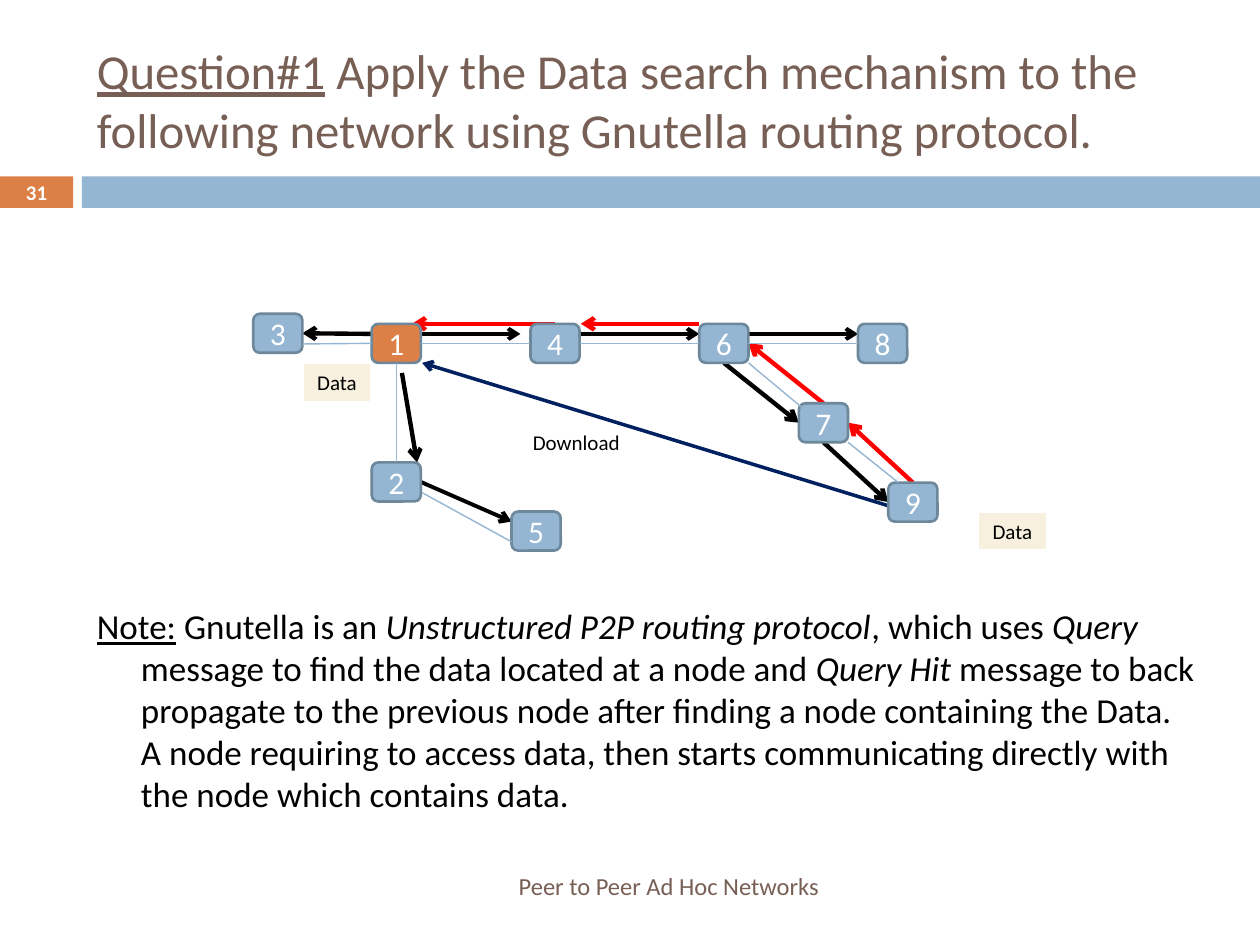
from lxml import etree
from pptx import Presentation
from pptx.dml.color import RGBColor
from pptx.enum.shapes import MSO_CONNECTOR, MSO_SHAPE
from pptx.enum.text import MSO_ANCHOR, PP_ALIGN
from pptx.oxml.ns import qn
from pptx.util import Pt

PX = 9144
RECT, ROUND = MSO_SHAPE.RECTANGLE, MSO_SHAPE.ROUNDED_RECTANGLE
STRAIGHT = MSO_CONNECTOR.STRAIGHT
LEFT, CENTER, RIGHT = PP_ALIGN.LEFT, PP_ALIGN.CENTER, PP_ALIGN.RIGHT
TOP, MIDDLE = MSO_ANCHOR.TOP, MSO_ANCHOR.MIDDLE
TOP_SIDE, LEFT_SIDE, BOTTOM_SIDE, RIGHT_SIDE = range(4)
FONT = "Calibri"
BLUE, ORANGE, BROWN, CREAM = "94B6D2", "DD8047", "775F55", "F7F0DE"
SLATE, NAVY, RED, BLACK, WHITE = "6D879B", "002060", "FF0000", "000000", "FFFFFF"

NODE_SIZE = (39, 31)
NODES = {
    "1": (94, 8), "9": (504, 134), "8": (480, 8), "5": (205, 157), "7": (433, 71),
    "6": (354, 8), "4": (220, 8), "2": (94, 118), "3": (0, 0),
}
QUERIES = [
    ((134, 16), (212, 16), 2.25),
    ((94, 16), ("3", RIGHT_SIDE), 2.5),
    ((118, 47), (130, 118), 2.5),
    ((393, 16), (480, 16), 2.25),
    ((260, 16), (354, 16), 2.25),
    (("6", BOTTOM_SIDE), ("7", LEFT_SIDE), 2.5),
    (("7", BOTTOM_SIDE), ("9", LEFT_SIDE), 2.5),
    (("2", RIGHT_SIDE), (205, 165), 2.25),
]
HITS = [
    (("9", TOP_SIDE), ("7", RIGHT_SIDE), 2.5),
    (("4", TOP_SIDE), (126, 8), 2.5),
    ((354, 8), (260, 8), 2.5),
    (("7", TOP_SIDE), ("6", RIGHT_SIDE), 2.5),
]
LINKS = [
    (("1", RIGHT_SIDE), ("4", LEFT_SIDE)),
    (("4", RIGHT_SIDE), ("6", LEFT_SIDE)),
    (("6", RIGHT_SIDE), ("8", LEFT_SIDE)),
    ((393, 39), (441, 79)),
    ((472, 102), (512, 134)),
    (("1", BOTTOM_SIDE), ("2", TOP_SIDE)),
    ((134, 142), (205, 181)),
    ((39, 24), ("1", LEFT_SIDE)),
]
UNDERLINE, ITALIC = {"underline": True}, {"italic": True}
TITLE = [
    ("Question#1", UNDERLINE),
    (" Apply the Data search mechanism to the following network using Gnutella routing protocol.", {}),
]
NOTE = [
    ("Note:", UNDERLINE),
    (" Gnutella is an ", {}),
    ("Unstructured P2P routing protocol", ITALIC),
    (", which uses ", {}),
    ("Query", ITALIC),
    (" message to find the data located at a node and ", {}),
    ("Query Hit ", ITALIC),
    ("message to back propagate to the previous node after finding a node containing the Data. "
     "A node requiring to access data, then starts communicating directly with the node which "
     "contains data.", {}),
]


def color(value):
    """Turn a hex string into a colour."""
    return RGBColor.from_string(value)


def emu(lengths):
    """Turn lengths in px into EMU."""
    return [length * PX for length in lengths]


def apply(target, values):
    """Set each named attribute on the target."""
    for name, value in values.items():
        setattr(target, name, value)


def write(shape, spans, size, ink, align=CENTER, anchor=MIDDLE, hanging=0):
    """Fill a shape with one paragraph of formatted spans."""
    apply(shape.text_frame, {"word_wrap": True, "vertical_anchor": anchor})
    para = shape.text_frame.paragraphs[0]
    para.alignment = align
    if hanging:
        settings = para._p.get_or_add_pPr()
        settings.set("marL", str(hanging * PX))
        settings.set("indent", str(-hanging * PX))
    for words, styles in spans:
        span = para.add_run()
        span.text = words
        apply(span.font, {"name": FONT, "size": Pt(size), **styles})
        span.font.color.rgb = color(ink)


def add_text(page, box, spans, size, ink, **layout):
    """Add a text box."""
    write(page.shapes.add_textbox(*emu(box)), spans, size, ink, **layout)


def add_block(page, kind, box, fill, line=None):
    """Add a flat filled shape, outlined when a line colour is given."""
    block = page.shapes.add_shape(kind, *emu(box))
    block.shadow.inherit = False
    block.fill.solid()
    block.fill.fore_color.rgb = color(fill)
    if line:
        block.line.color.rgb = color(line)
        block.line.width = Pt(1.5)
    else:
        block.line.fill.background()
    return block


def add_edge(page, box, nodes, start, end, ink, width, arrows=()):
    """Join two ends, each a point in the box or a node with its side."""
    left, top = box
    points = [(0, 0) if spot[0] in nodes else (left + spot[0], top + spot[1])
              for spot in (start, end)]
    edge = page.shapes.add_connector(STRAIGHT, *emu(points[0] + points[1]))
    for spot, connect in ((start, edge.begin_connect), (end, edge.end_connect)):
        if spot[0] in nodes:
            connect(nodes[spot[0]], spot[1])
    edge.line.color.rgb = color(ink)
    edge.line.width = Pt(width)
    for tip in arrows:
        etree.SubElement(edge.line._get_or_add_ln(), qn(f"a:{tip}"), type="arrow")
    etree.SubElement(edge._element.spPr, qn("a:effectLst"))
    return edge


def draw_header(page, box):
    """Place the title, the coloured band and the page number."""
    left, top, width, height = box
    add_block(page, RECT, (left, top + 140, 58, 25), ORANGE)
    add_block(page, RECT, (left + 65, top + 140, width - 65, 25), BLUE)
    add_text(page, (left + 67, top + 25, 892, 108), TITLE, 27.9, BROWN, align=LEFT)
    add_text(page, (left, top + 139, 58, 27), [("31", {"bold": True})], 11.9, WHITE)


def draw_network(page, box):
    """Place the nodes, links, messages and labels of the network."""
    left, top = box
    for x, y in ((39, 39), (575, 157)):
        label = add_block(page, RECT, (left + x, top + y, 55, 31), CREAM, WHITE)
        write(label, [("Data", {})], 12, BLACK)
    nodes = {}
    for name, (x, y) in NODES.items():
        fill = ORANGE if name == "1" else BLUE
        nodes[name] = add_block(page, ROUND, (left + x, top + y, *NODE_SIZE), fill, SLATE)
        write(nodes[name], [(name, {})], 18, WHITE)
    arrows = [add_edge(page, box, nodes, (134, 39), (519, 157), NAVY, 2, ("headEnd", "tailEnd"))]
    for messages, ink in ((QUERIES, BLACK), (HITS, RED)):
        for start, end, width in messages:
            arrows.append(add_edge(page, box, nodes, start, end, ink, width, ("tailEnd",)))
    for arrow in arrows:
        nodes["1"]._element.addprevious(arrow._element)
    for start, end in LINKS:
        add_edge(page, box, nodes, start, end, BLUE, 0.79)
    add_text(page, (left + 212, top + 87, 102, 30), [("Download", {})], 12, BLACK,
             align=LEFT, anchor=TOP)


def draw_note(page, box):
    """Place the explanatory note with its hanging indent."""
    add_text(page, box, NOTE, 20, BLACK, align=LEFT, anchor=TOP, hanging=35)


def draw_footer(page, box):
    """Place the footer line."""
    add_text(page, box, [("Peer to Peer Ad Hoc Networks", {})], 14, BROWN, align=RIGHT)


def main():
    """Build and save the deck."""
    deck = Presentation()
    apply(deck, {"slide_width": 1000 * PX, "slide_height": 750 * PX})
    page = deck.slides.add_slide(deck.slide_layouts[6])
    draw_header(page, (0, 0, 1000, 166))
    draw_note(page, (67, 475, 892, 247))
    draw_network(page, (201, 249))
    draw_footer(page, (67, 683, 593, 40))
    deck.save("out.pptx")


if __name__ == "__main__":
    main()
